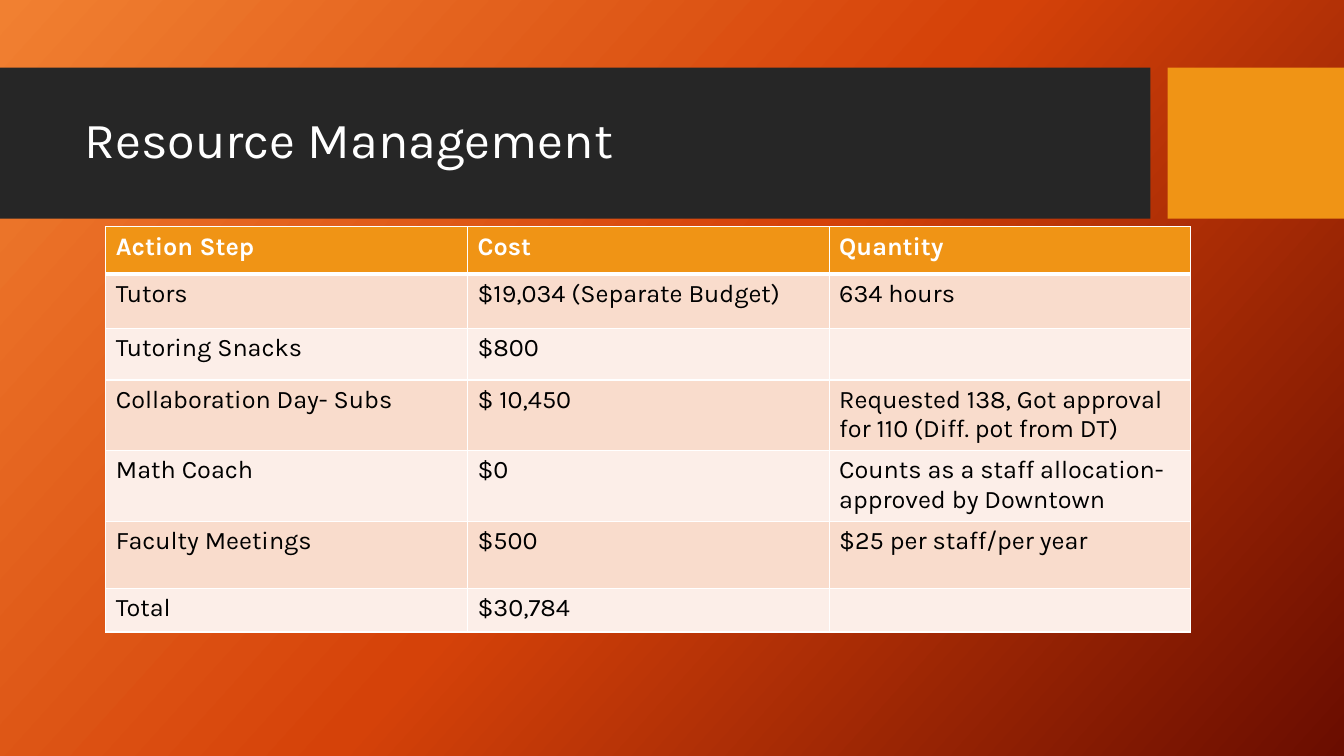
from copy import deepcopy
from lxml import etree
from pptx import Presentation
from pptx.dml.color import RGBColor
from pptx.enum.shapes import MSO_SHAPE
from pptx.enum.text import MSO_ANCHOR
from pptx.oxml.ns import qn
from pptx.util import Inches, Pt

RECT = MSO_SHAPE.RECTANGLE
MIDDLE = MSO_ANCHOR.MIDDLE
FONT = "Karla"
COLORS = {"band": "262626", "accent": "F09415", "white": "FFFFFF", "black": "000000",
          "odd": "F9DCCC", "even": "FCEEE8",
          "light": "F18031", "mid": "D54209", "dark": "6A0D00"}


def rgb(name):
    return RGBColor.from_string(COLORS[name])


def style(p, size, color, bold=False):
    p.font.name, p.font.size, p.font.bold = FONT, Pt(size), bold
    p.font.color.rgb = rgb(color)


prs = Presentation()
prs.slide_width, prs.slide_height = Inches(13.33), Inches(7.5)
s = prs.slides.add_slide(prs.slide_layouts[6])

# Background: three-stop diagonal gradient
fill = s.background.fill
fill.gradient()
fill.gradient_angle = 360 - 42
first = s.background._cSld.find(".//" + qn("a:gs"))
first.addnext(deepcopy(first))
for stop, (pos, name) in zip(fill.gradient_stops, [(0, "light"), (0.5, "mid"), (1, "dark")]):
    stop.position = pos
    stop.color.rgb = rgb(name)

# Title band and accent block
for left, width, name in [(0, 11.41, "band"), (11.58, 1.75, "accent")]:
    sp = s.shapes.add_shape(RECT, Inches(left), Inches(0.67), Inches(width), Inches(1.5))
    sp.shadow.inherit = False
    sp.fill.solid()
    sp.fill.fore_color.rgb = rgb(name)
    sp.line.fill.background()

# Title
tf = s.shapes.add_textbox(Inches(0.74), Inches(0.82), Inches(10.51), Inches(1.18)).text_frame
tf.word_wrap = True
tf.vertical_anchor = MIDDLE
p = tf.paragraphs[0]
p.text = "Resource Management"
p.line_spacing = 0.9
style(p, 36, "white")

# Budget table
rows = [
    ("Action Step", "Cost", "Quantity"),
    ("Tutors", "$19,034 (Separate Budget)", "634 hours"),
    ("Tutoring Snacks", "$800", ""),
    ("Collaboration Day- Subs", "$ 10,450", "Requested 138, Got approval for 110 (Diff. pot from DT)"),
    ("Math Coach", "$0", "Counts as a staff allocation-approved by Downtown"),
    ("Faculty Meetings", "$500", "$25 per staff/per year"),
    ("Total", "$30,784", ""),
]
heights = [0.47, 0.54, 0.51, 0.69, 0.69, 0.67, 0.43]
table = s.shapes.add_table(len(rows), 3, Inches(1.05), Inches(2.25),
                           Inches(10.76), Inches(sum(heights))).table
for r, (texts, height) in enumerate(zip(rows, heights)):
    table.rows[r].height = Inches(height)
    header = r == 0
    for c, text in enumerate(texts):
        cell = table.cell(r, c)
        p = cell.text_frame.paragraphs[0]
        p.text = text
        style(p, 18, "white" if header else "black", header)

        # White borders, thicker between header and body
        tcPr = cell._tc.get_or_add_tcPr()
        for side in ("L", "R", "T", "B"):
            thick = (r, side) in [(0, "B"), (1, "T")]
            ln = etree.SubElement(tcPr, qn("a:ln" + side), w=str(Pt(3 if thick else 1)))
            solid = etree.SubElement(ln, qn("a:solidFill"))
            etree.SubElement(solid, qn("a:srgbClr"), val=COLORS["white"])
        cell.fill.solid()
        cell.fill.fore_color.rgb = rgb("accent" if header else "odd" if r % 2 else "even")

prs.save("out.pptx")
